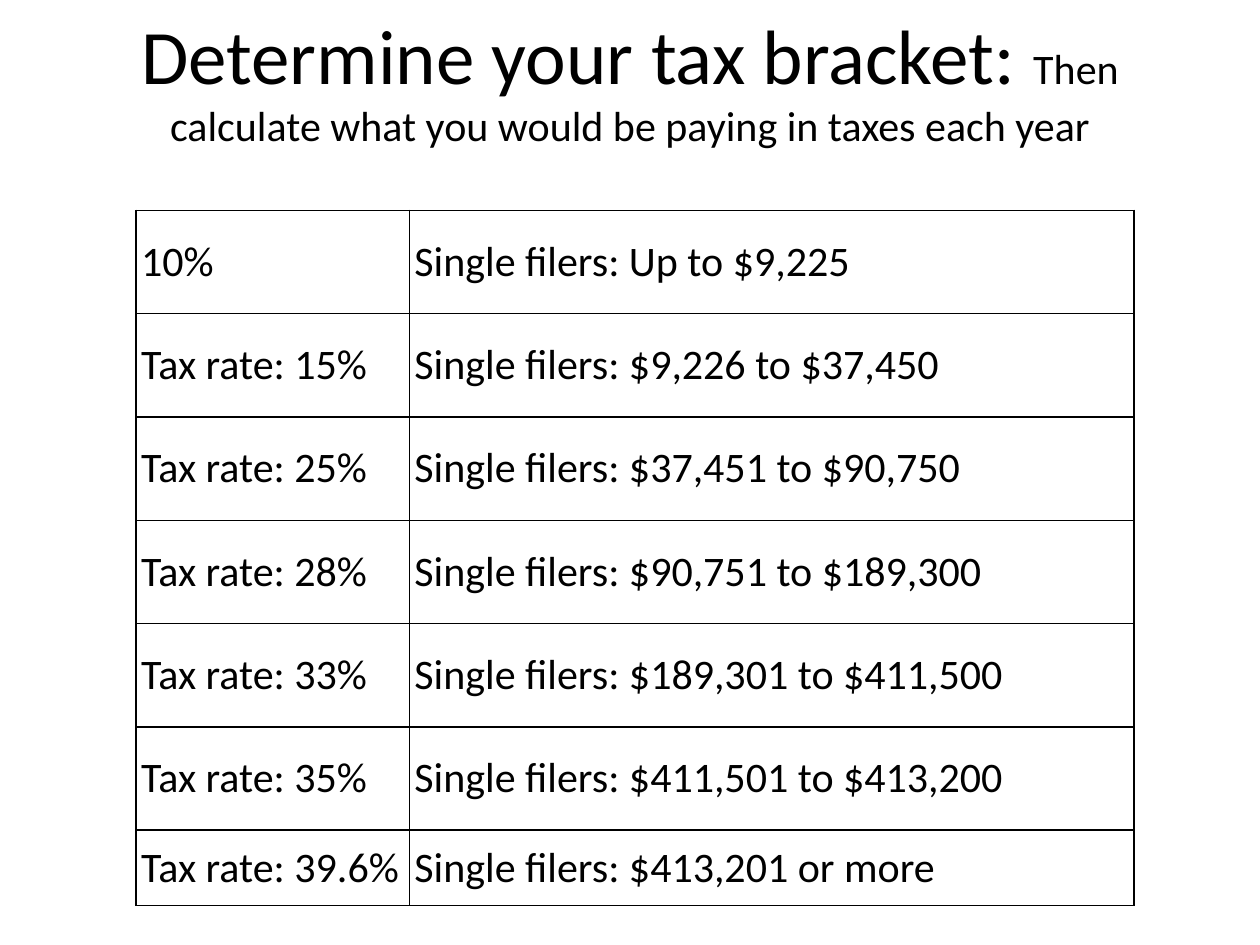
from dataclasses import dataclass

from pptx import Presentation
from pptx.dml.color import RGBColor
from pptx.enum.text import MSO_ANCHOR, PP_ALIGN
from pptx.oxml import parse_xml
from pptx.oxml.ns import nsdecls
from pptx.util import Inches, Pt


@dataclass(frozen=True)
class Theme:
    font: str = "Calibri"
    ink: str = "000000"
    title_size: int = 44
    body_size: int = 24
    border: int = 1


THEME = Theme()
COLUMNS = [2.17, 5.75]
ROW_HEIGHT, LAST_ROW_HEIGHT = 0.82, 0.6
BRACKETS = [
    ("10%", "Up to $9,225"),
    ("Tax rate: 15%", "$9,226 to $37,450"),
    ("Tax rate: 25%", "$37,451 to $90,750"),
    ("Tax rate: 28%", "$90,751 to $189,300"),
    ("Tax rate: 33%", "$189,301 to $411,500"),
    ("Tax rate: 35%", "$411,501 to $413,200"),
    ("Tax rate: 39.6%", "$413,201 or more"),
]


def add_text(p, text, size=THEME.body_size, color=THEME.ink, align=PP_ALIGN.LEFT):
    p.alignment = align
    r = p.add_run()
    r.text = text
    r.font.name = THEME.font
    r.font.size = Pt(size)
    r.font.color.rgb = RGBColor.from_string(color)


def add_title(s):
    title = s.shapes.title
    title.left, title.top = Inches(0.5), 0
    title.width, title.height = Inches(9), Inches(1.25)
    tf = title.text_frame
    tf.word_wrap = True
    tf.vertical_anchor = MSO_ANCHOR.MIDDLE
    p = tf.paragraphs[0]
    add_text(p, "Determine your tax bracket: ", size=THEME.title_size, align=PP_ALIGN.CENTER)
    add_text(p, "Then calculate what you would be paying in taxes each year",
             align=PP_ALIGN.CENTER)


def set_borders(cell):
    """Draw all four sides; the lines must come before the fill in tcPr."""
    tcPr = cell._tc.get_or_add_tcPr()
    for i, side in enumerate(("lnL", "lnR", "lnT", "lnB")):
        tcPr.insert(i, parse_xml(
            f'<a:{side} {nsdecls("a")} w="{Pt(THEME.border)}"><a:solidFill>'
            f'<a:srgbClr val="{THEME.ink}"/></a:solidFill></a:{side}>'))


def fill_cell(cell, text):
    cell.margin_left = cell.margin_right = Inches(0.04)
    cell.margin_top = cell.margin_bottom = Inches(0.02)
    cell.vertical_anchor = MSO_ANCHOR.MIDDLE
    cell.fill.background()
    set_borders(cell)
    add_text(cell.text_frame.paragraphs[0], text)


def add_bracket_table(s):
    heights = [ROW_HEIGHT] * (len(BRACKETS) - 1) + [LAST_ROW_HEIGHT]
    table = s.shapes.add_table(
        len(BRACKETS), len(COLUMNS), Inches(1.08), Inches(1.67),
        Inches(sum(COLUMNS)), Inches(sum(heights))).table
    table.first_row = table.horz_banding = False
    for column, width in zip(table.columns, COLUMNS):
        column.width = Inches(width)
    for row, height, (rate, income) in zip(table.rows, heights, BRACKETS):
        row.height = Inches(height)
        for cell, text in zip(row.cells, (rate, f"Single filers: {income}")):
            fill_cell(cell, text)


def main():
    prs = Presentation()
    prs.slide_width, prs.slide_height = Inches(10), Inches(7.5)
    s = prs.slides.add_slide(prs.slide_layouts.get_by_name("Title Only"))
    add_title(s)
    add_bracket_table(s)
    prs.save("out.pptx")


if __name__ == "__main__":
    main()
